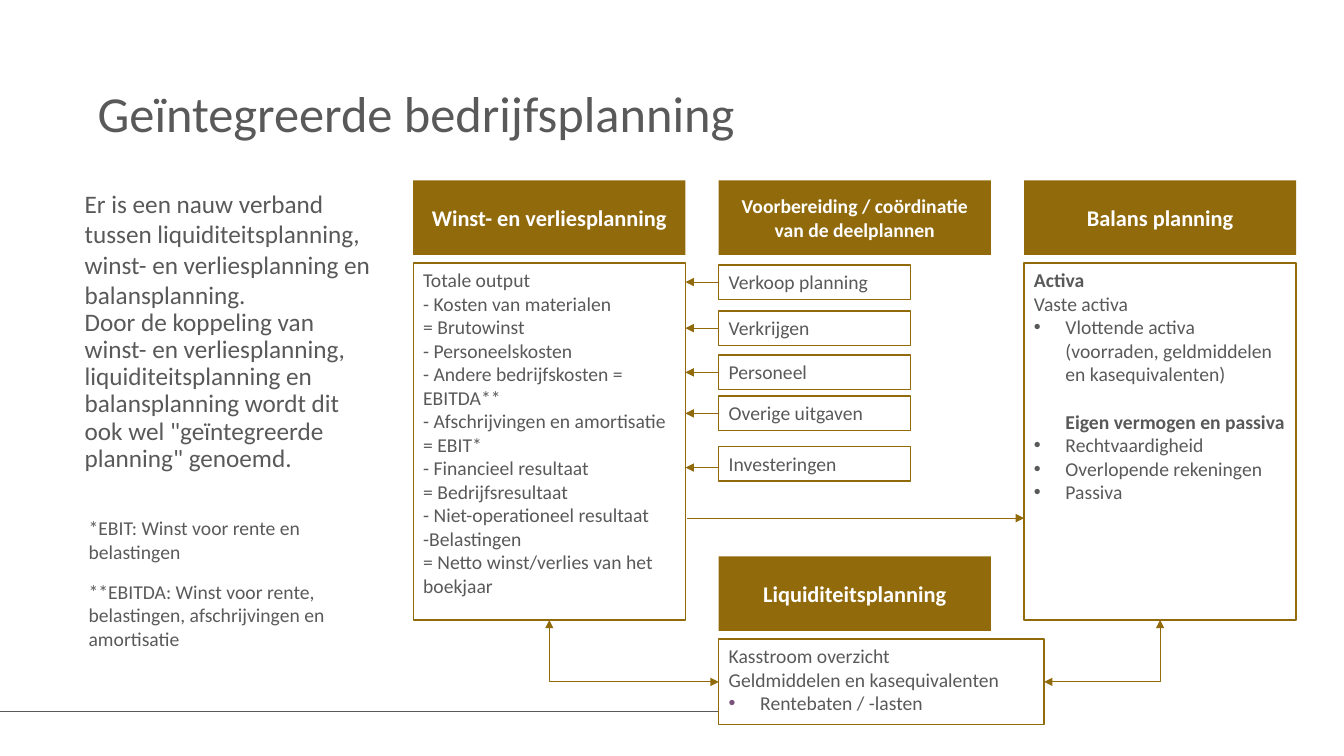
"""Build the slide on integrated business planning."""
from lxml import etree
from pptx import Presentation
from pptx.dml.color import RGBColor
from pptx.enum import shapes, text
from pptx.oxml import ns
from pptx.util import Pt


class Theme:
    font = "Calibri"
    gold = RGBColor(0x91, 0x6A, 0x0C)
    grey = RGBColor(0x59, 0x59, 0x59)
    note_grey = RGBColor(0x59, 0x5A, 0x59)
    purple = RGBColor(0x79, 0x52, 0x7B)
    white = RGBColor(0xFF, 0xFF, 0xFF)
    title, body, heading, small = Pt(36), Pt(18), Pt(16), Pt(14)


def write(shape, lines, size, color, bold=False, align=text.PP_ALIGN.LEFT,
          anchor=text.MSO_ANCHOR.TOP):
    frame = shape.text_frame
    frame.text = "\n".join(lines)
    frame.word_wrap = True
    frame.auto_size = text.MSO_AUTO_SIZE.NONE
    frame.vertical_anchor = anchor
    for paragraph in frame.paragraphs:
        paragraph.alignment = align
        for run in paragraph.runs:
            run.font.name, run.font.size = Theme.font, size
            run.font.color.rgb, run.font.bold = color, bold
    return frame.paragraphs


def add_line(kind, start, end, color, width, arrows=()):
    line = slide.shapes.add_connector(kind, *[Pt(value) for value in (*start, *end)])
    line.line.color.rgb = color
    line.line.width = Pt(width)
    for arrow in arrows:
        etree.SubElement(line.line._get_or_add_ln(), ns.qn(f"a:{arrow}"), type="triangle")
    etree.SubElement(line._element.spPr, ns.qn("a:effectLst"))
    return line


presentation = Presentation()
presentation.slide_width, presentation.slide_height = Pt(960), Pt(540)
slide = presentation.slides.add_slide(presentation.slide_layouts[1])
STRAIGHT, ELBOW = shapes.MSO_CONNECTOR.STRAIGHT, shapes.MSO_CONNECTOR.ELBOW

title, body = slide.placeholders
title.left, title.top, title.width, title.height = Pt(62.6), Pt(59.8), Pt(836), Pt(63.4)
body.left, body.top, body.width, body.height = Pt(53.3), Pt(131), Pt(222.5), Pt(242.6)
title_line, = write(title, ["Geïntegreerde bedrijfsplanning"], Theme.title, Theme.grey)
title_line.line_spacing = 0.9
introduction = write(body, [
    "Er is een nauw verband tussen liquiditeitsplanning, winst- en verliesplanning en "
    "balansplanning.",
    "Door de koppeling van winst- en verliesplanning, liquiditeitsplanning en "
    'balansplanning wordt dit ook wel "geïntegreerde planning" genoemd.',
], Theme.body, Theme.grey)
for paragraph, spacing in zip(introduction, (1.0, 0.9)):
    paragraph.line_spacing = spacing
    paragraph.space_before = Pt(0)
    properties = paragraph._p.get_or_add_pPr()
    properties.set("marL", "0")
    properties.set("indent", "0")
    etree.SubElement(properties, ns.qn("a:buNone"))

add_line(STRAIGHT, (0, 508.3), (593.3, 508.3), Theme.grey, 1)

notes = slide.shapes.add_textbox(Pt(56.2), Pt(365), Pt(216), Pt(104.4))
note_lines = write(notes, [
    "*EBIT: Winst voor rente en belastingen",
    "**EBITDA: Winst voor rente, belastingen, afschrijvingen en amortisatie",
], Theme.small, Theme.note_grey)
note_lines[1].space_before = Pt(12)

profit_left, plan_left, balance_left = 295.2, 513.4, 731.5
column_width, header_height = 194.4, 53.3
headers = [
    ("Winst- en verliesplanning", profit_left, 128.9, Theme.heading),
    ("Balans planning", balance_left, 128.9, Theme.heading),
    ("Voorbereiding / coördinatie van de deelplannen", plan_left, 128.9, Theme.small),
    ("Liquiditeitsplanning", plan_left, 397.4, Theme.heading),
]
for label, left, top, size in headers:
    header = slide.shapes.add_shape(shapes.MSO_SHAPE.RECTANGLE, Pt(left), Pt(top),
                                    Pt(column_width), Pt(header_height))
    header.shadow.inherit = False
    header.fill.solid()
    header.fill.fore_color.rgb = Theme.gold
    header.line.fill.background()
    write(header, [label], size, Theme.white, True, text.PP_ALIGN.CENTER,
          text.MSO_ANCHOR.MIDDLE)

plan_height = 24.6
plans = [
    ("Verkoop planning", 189.2, 201.5),
    ("Verkrijgen", 222.1, 234.4),
    ("Personeel", 253.7, 266),
    ("Overige uitgaven", 283, 295.3),
    ("Investeringen", 319, 334),
]
panels = [
    (profit_left, 187.9, column_width, 254.9, [
        "Totale output", "- Kosten van materialen", "= Brutowinst", "- Personeelskosten",
        "- Andere bedrijfskosten = EBITDA**", "- Afschrijvingen en amortisatie",
        "= EBIT*", "- Financieel resultaat", "= Bedrijfsresultaat",
        "- Niet-operationeel resultaat", "-Belastingen",
        "= Netto winst/verlies van het boekjaar"]),
    (balance_left, 187.9, column_width, 254.9, [
        "Activa", "Vaste activa",
        "Vlottende activa (voorraden, geldmiddelen en kasequivalenten)",
        "Eigen vermogen en passiva", "Rechtvaardigheid", "Overlopende rekeningen",
        "Passiva"]),
    (plan_left, 456.5, 232.4, 61.2, [
        "Kasstroom overzicht", "Geldmiddelen en kasequivalenten",
        "Rentebaten / -lasten"]),
]
panels += [(plan_left, top, 136.8, plan_height, [label]) for label, top, _ in plans]
panel_shapes = []
for left, top, width, height, lines in panels:
    panel = slide.shapes.add_shape(shapes.MSO_SHAPE.RECTANGLE, Pt(left), Pt(top),
                                   Pt(width), Pt(height))
    panel.shadow.inherit = False
    panel.fill.solid()
    panel.fill.fore_color.rgb = Theme.white
    panel.line.color.rgb = Theme.gold
    panel.line.width = Pt(1)
    write(panel, lines, Theme.small, Theme.grey)
    panel_shapes.append(panel)
profit, balance, cash, *plan_shapes = panel_shapes

balance_lines = balance.text_frame.paragraphs
for heading in (balance_lines[0], balance_lines[3]):
    heading.runs[0].font.bold = True
balance_lines[3].space_before = Pt(17)
indented = [(paragraph, Theme.grey) for paragraph in balance_lines[2:]]
indented.append((cash.text_frame.paragraphs[2], Theme.purple))
for paragraph, color in indented:
    properties = paragraph._p.get_or_add_pPr()
    properties.set("marL", str(Pt(22.5)))
    if paragraph.runs[0].font.bold:
        properties.set("indent", "0")
        continue
    properties.set("indent", str(-Pt(22.5)))
    bullet_color = etree.SubElement(properties, ns.qn("a:buClr"))
    etree.SubElement(bullet_color, ns.qn("a:srgbClr"), val=str(color))
    etree.SubElement(properties, ns.qn("a:buFont"), typeface="Arial")
    etree.SubElement(properties, ns.qn("a:buChar"), char="•")

profit_right = profit_left + column_width
for plan, (_, top, arrow_top) in zip(plan_shapes, plans):
    arrow = add_line(STRAIGHT, (plan_left, arrow_top), (profit_right, arrow_top),
                     Theme.gold, 0.75, ["tailEnd"])
    if abs(arrow_top - top - plan_height / 2) < 0.1:
        arrow.begin_connect(plan, 1)

add_line(STRAIGHT, (491, 370.1), (balance_left, 370.1), Theme.gold, 0.75, ["tailEnd"])

for target, side, start, end in [
    (profit, 1, (plan_left, 487.1), (392.4, 442.8)),
    (balance, 3, (745.8, 487.1), (828.7, 442.8)),
]:
    elbow = add_line(ELBOW, start, end, Theme.gold, 0.75, ["headEnd", "tailEnd"])
    elbow._element.spPr.find(ns.qn("a:prstGeom")).set("prst", "bentConnector2")
    elbow.begin_connect(cash, side)
    elbow.end_connect(target, 2)

presentation.save("out.pptx")
